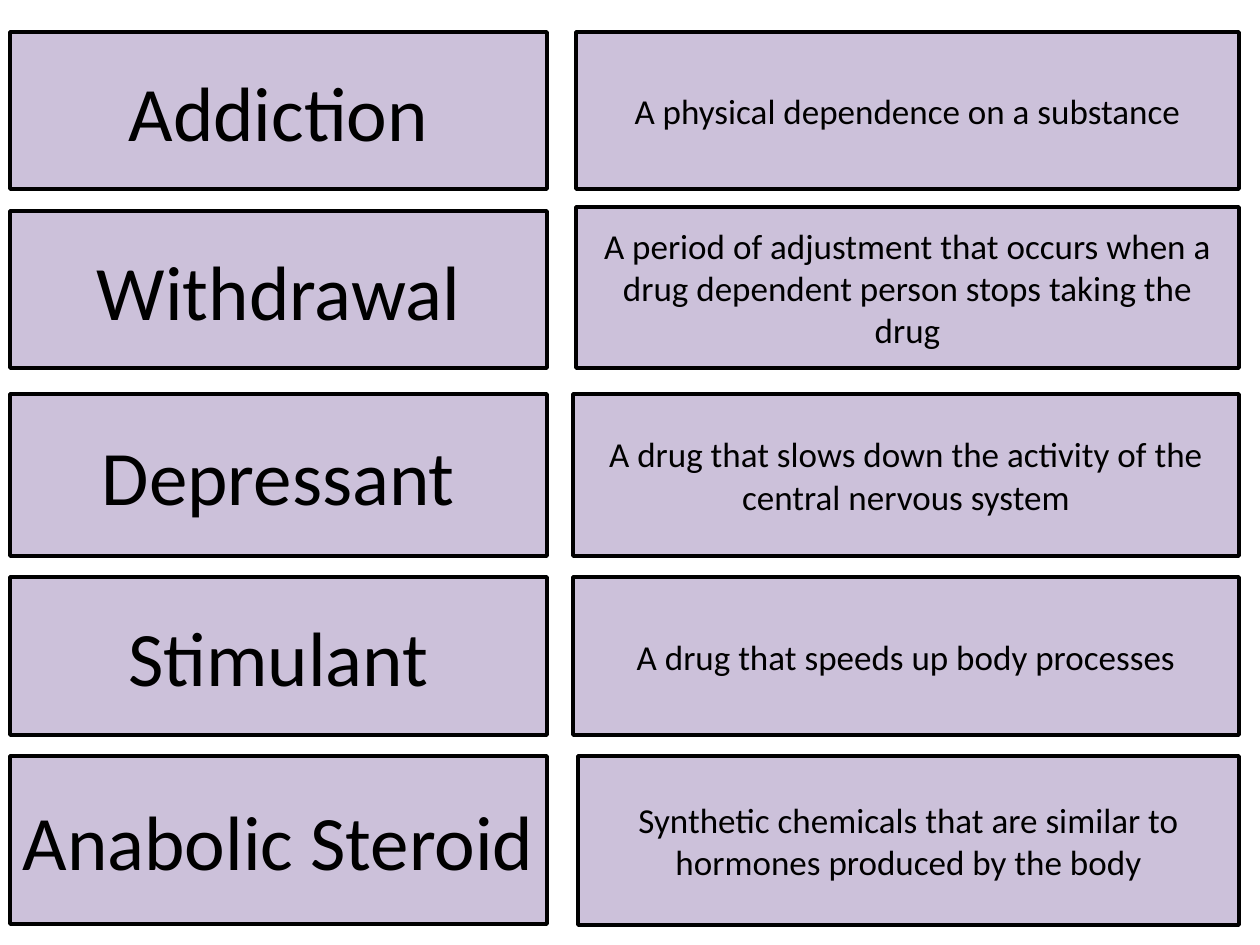
"""Build a slide of matching cards: drug terms and their definitions."""
from dataclasses import dataclass

from pptx import Presentation
from pptx.dml.color import RGBColor
from pptx.enum.shapes import MSO_SHAPE
from pptx.enum.text import MSO_ANCHOR, PP_ALIGN
from pptx.shapes.autoshape import Shape
from pptx.slide import Slide
from pptx.util import Emu, Pt

PIXELS_PER_INCH = 126
TERM_LEFT, TERM_WIDTH = 10, 537
DEFINITION_RIGHT = 1239


@dataclass(frozen=True)
class Theme:
    """Colours, font and type sizes of the cards."""

    fill: RGBColor = RGBColor(0xCC, 0xC1, 0xDA)
    ink: RGBColor = RGBColor(0x00, 0x00, 0x00)
    font: str = "Calibri"
    term_size: int = 44
    definition_size: int = 20
    line_width: int = 2


@dataclass(frozen=True)
class Box:
    """A rectangle in px."""

    left: int
    top: int
    width: int
    height: int


@dataclass(frozen=True)
class Entry:
    """A term, its definition and the vertical extent of their cards in px."""

    term: str
    definition: str
    term_top: int
    term_height: int
    definition_left: int
    definition_top: int
    definition_height: int


THEME = Theme()

ENTRIES = (
    Entry("Addiction", "A physical dependence on a substance", 32, 157, 576, 32, 157),
    Entry(
        "Withdrawal",
        "A period of adjustment that occurs when a drug dependent person stops taking the drug",
        211, 157, 576, 207, 161,
    ),
    Entry(
        "Depressant",
        "A drug that slows down the activity of the central nervous system",
        394, 162, 573, 394, 162,
    ),
    Entry("Stimulant", "A drug that speeds up body processes", 577, 158, 573, 577, 158),
    Entry(
        "Anabolic Steroid",
        "Synthetic chemicals that are similar to hormones produced by the body",
        756, 168, 578, 756, 169,
    ),
)


def px(length: int) -> Emu:
    """Turn a length in px into EMU."""
    return Emu(round(length * 914400 / PIXELS_PER_INCH))


def write_text(shape: Shape, text: str, *, size: int, color: RGBColor, font: str) -> None:
    """Write centred text in a shape."""
    frame = shape.text_frame
    frame.word_wrap = True
    frame.vertical_anchor = MSO_ANCHOR.MIDDLE
    paragraph = frame.paragraphs[0]
    paragraph.alignment = PP_ALIGN.CENTER
    run = paragraph.add_run()
    run.text = text
    run.font.size = Pt(size)
    run.font.name = font
    run.font.color.rgb = color


def draw_card(slide: Slide, box: Box, text: str, size: int) -> None:
    """Draw one outlined card with its text."""
    shape = slide.shapes.add_shape(
        MSO_SHAPE.FLOWCHART_PROCESS, px(box.left), px(box.top), px(box.width), px(box.height)
    )
    shape.shadow.inherit = False
    shape.fill.solid()
    shape.fill.fore_color.rgb = THEME.fill
    shape.line.color.rgb = THEME.ink
    shape.line.width = Pt(THEME.line_width)
    write_text(shape, text, size=size, color=THEME.ink, font=THEME.font)


def draw_entry(slide: Slide, entry: Entry) -> None:
    """Draw a term card and its definition card."""
    term_box = Box(TERM_LEFT, entry.term_top, TERM_WIDTH, entry.term_height)
    definition_box = Box(
        entry.definition_left,
        entry.definition_top,
        DEFINITION_RIGHT - entry.definition_left,
        entry.definition_height,
    )
    draw_card(slide, term_box, entry.term, THEME.term_size)
    draw_card(slide, definition_box, entry.definition, THEME.definition_size)


def main() -> None:
    """Build and save the presentation."""
    presentation = Presentation()
    presentation.slide_width = px(1260)
    presentation.slide_height = px(945)
    slide = presentation.slides.add_slide(presentation.slide_layouts[6])
    for entry in ENTRIES:
        draw_entry(slide, entry)
    presentation.save("out.pptx")


if __name__ == "__main__":
    main()
